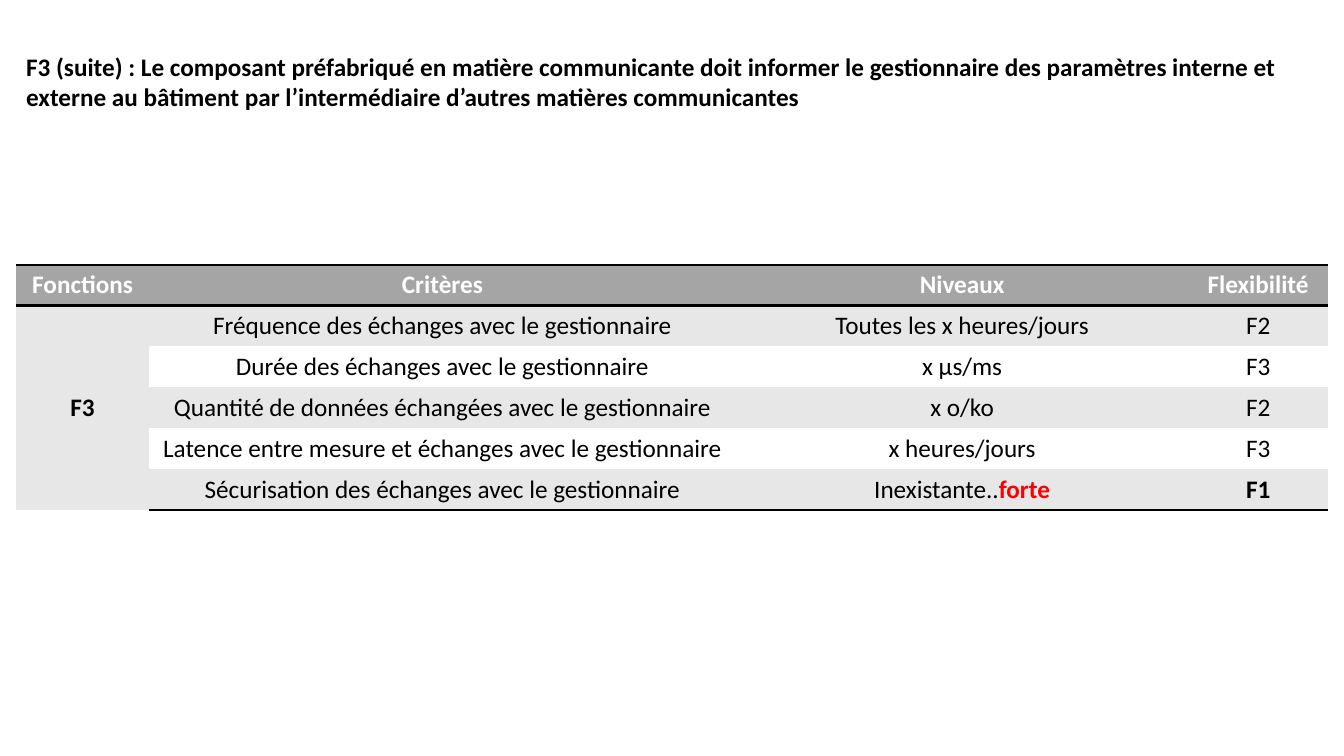
from dataclasses import dataclass

from lxml.etree import SubElement
from pptx import Presentation
from pptx.dml.color import RGBColor
from pptx.enum.text import MSO_ANCHOR, MSO_AUTO_SIZE, PP_ALIGN
from pptx.oxml.ns import qn
from pptx.slide import Slide
from pptx.table import Table, _Cell
from pptx.text.text import _Paragraph
from pptx.util import Pt

COLORS = {
    "text": "000000",
    "header_text": "FFFFFF",
    "accent": "FF0000",
    "header": "A5A5A5",
    "band": "E7E7E7",
    "plain": "FFFFFF",
    "rule": "000000",
}
FONT_FORMAT = {"name": "Calibri", "size": Pt(18)}
NO_STYLE_NO_GRID = "{2D5ABB26-0587-4C30-8999-92F81FD0307C}"

LEFT = 11.5
WIDTH = 937
TITLE_TOP, TITLE_HEIGHT = 33.1, 51
TABLE_TOP, ROW_HEIGHT = 189, 29.25
COLUMN_WIDTHS = (95, 419, 323.5, 99.5)
OUTER_RULE, HEADER_RULE = 1.5, 2

TITLE = (
    "F3 (suite) : Le composant préfabriqué en matière communicante doit informer "
    "le gestionnaire des paramètres interne et externe au bâtiment par "
    "l’intermédiaire d’autres matières communicantes"
)
HEADERS = ("Fonctions", "Critères", "Niveaux", "Flexibilité")
FUNCTION_NAME = "F3"


@dataclass(frozen=True)
class TextPart:
    text: str
    color: str = "text"
    bold: bool = False


@dataclass(frozen=True)
class Criterion:
    name: str
    level: tuple[TextPart, ...]
    flexibility: TextPart


CRITERIA = (
    Criterion("Fréquence des échanges avec le gestionnaire",
              (TextPart("Toutes les x heures/jours"),), TextPart("F2")),
    Criterion("Durée des échanges avec le gestionnaire",
              (TextPart("x µs/ms"),), TextPart("F3")),
    Criterion("Quantité de données échangées avec le gestionnaire",
              (TextPart("x o/ko"),), TextPart("F2")),
    Criterion("Latence entre mesure et échanges avec le gestionnaire",
              (TextPart("x heures/jours"),), TextPart("F3")),
    Criterion("Sécurisation des échanges avec le gestionnaire",
              (TextPart("Inexistante.."), TextPart("forte", "accent", True)),
              TextPart("F1", bold=True)),
)


def write_parts(paragraph: _Paragraph, parts: tuple[TextPart, ...]) -> None:
    for part in parts:
        run = paragraph.add_run()
        run.text = part.text
        for attribute, value in FONT_FORMAT.items():
            setattr(run.font, attribute, value)
        run.font.bold = part.bold
        run.font.color.rgb = RGBColor.from_string(COLORS[part.color])


def fill_cell(cell: _Cell, color: str) -> None:
    cell.fill.solid()
    cell.fill.fore_color.rgb = RGBColor.from_string(COLORS[color])


def write_cell(cell: _Cell, parts: tuple[TextPart, ...]) -> None:
    paragraph = cell.text_frame.paragraphs[0]
    paragraph.alignment = PP_ALIGN.CENTER
    write_parts(paragraph, parts)


def rule_row(table: Table, row: int, side: str, width: float) -> None:
    """Draw a rule along the top ("T") or bottom ("B") of a whole row."""
    for column in range(len(table.columns)):
        properties = table.cell(row, column)._tc.get_or_add_tcPr()
        line = SubElement(properties, qn(f"a:ln{side}"), w=str(Pt(width)))
        fill = SubElement(line, qn("a:solidFill"))
        SubElement(fill, qn("a:srgbClr"), val=COLORS["rule"])


def add_title(slide: Slide) -> None:
    title = slide.shapes.title
    title.left, title.top = Pt(LEFT), Pt(TITLE_TOP)
    title.width, title.height = Pt(WIDTH), Pt(TITLE_HEIGHT)
    frame_format = {
        "word_wrap": True,
        "auto_size": MSO_AUTO_SIZE.NONE,
        "vertical_anchor": MSO_ANCHOR.TOP,
    }
    for attribute, value in frame_format.items():
        setattr(title.text_frame, attribute, value)
    paragraph = title.text_frame.paragraphs[0]
    paragraph.alignment = PP_ALIGN.LEFT
    write_parts(paragraph, (TextPart(TITLE, bold=True),))


def add_criteria_table(slide: Slide) -> None:
    row_count = len(CRITERIA) + 1
    frame = slide.shapes.add_table(
        row_count, len(HEADERS), Pt(LEFT), Pt(TABLE_TOP),
        Pt(WIDTH), Pt(ROW_HEIGHT * row_count),
    )
    table = frame.table
    frame._element.find(f".//{qn('a:tableStyleId')}").text = NO_STYLE_NO_GRID
    for column, width in zip(table.columns, COLUMN_WIDTHS):
        column.width = Pt(width)
    for row in table.rows:
        row.height = Pt(ROW_HEIGHT)

    # Rules come before fills in the cell properties.
    rule_row(table, 0, "T", OUTER_RULE)
    rule_row(table, 0, "B", HEADER_RULE)
    rule_row(table, row_count - 1, "B", OUTER_RULE)

    for column, header in enumerate(HEADERS):
        fill_cell(table.cell(0, column), "header")
        write_cell(table.cell(0, column), (TextPart(header, "header_text", True),))

    for row, criterion in enumerate(CRITERIA, start=1):
        fill_cell(table.cell(row, 0), "band")
        contents = ((TextPart(criterion.name),), criterion.level, (criterion.flexibility,))
        for column, parts in enumerate(contents, start=1):
            fill_cell(table.cell(row, column), "band" if row % 2 else "plain")
            write_cell(table.cell(row, column), parts)

    function_cell = table.cell(1, 0)
    function_cell.merge(table.cell(row_count - 1, 0))
    function_cell.vertical_anchor = MSO_ANCHOR.MIDDLE
    write_cell(function_cell, (TextPart(FUNCTION_NAME, bold=True),))


def main() -> None:
    presentation = Presentation()
    presentation.slide_width, presentation.slide_height = Pt(960), Pt(540)
    slide = presentation.slides.add_slide(presentation.slide_layouts[5])
    add_criteria_table(slide)
    add_title(slide)
    presentation.save("out.pptx")


if __name__ == "__main__":
    main()
